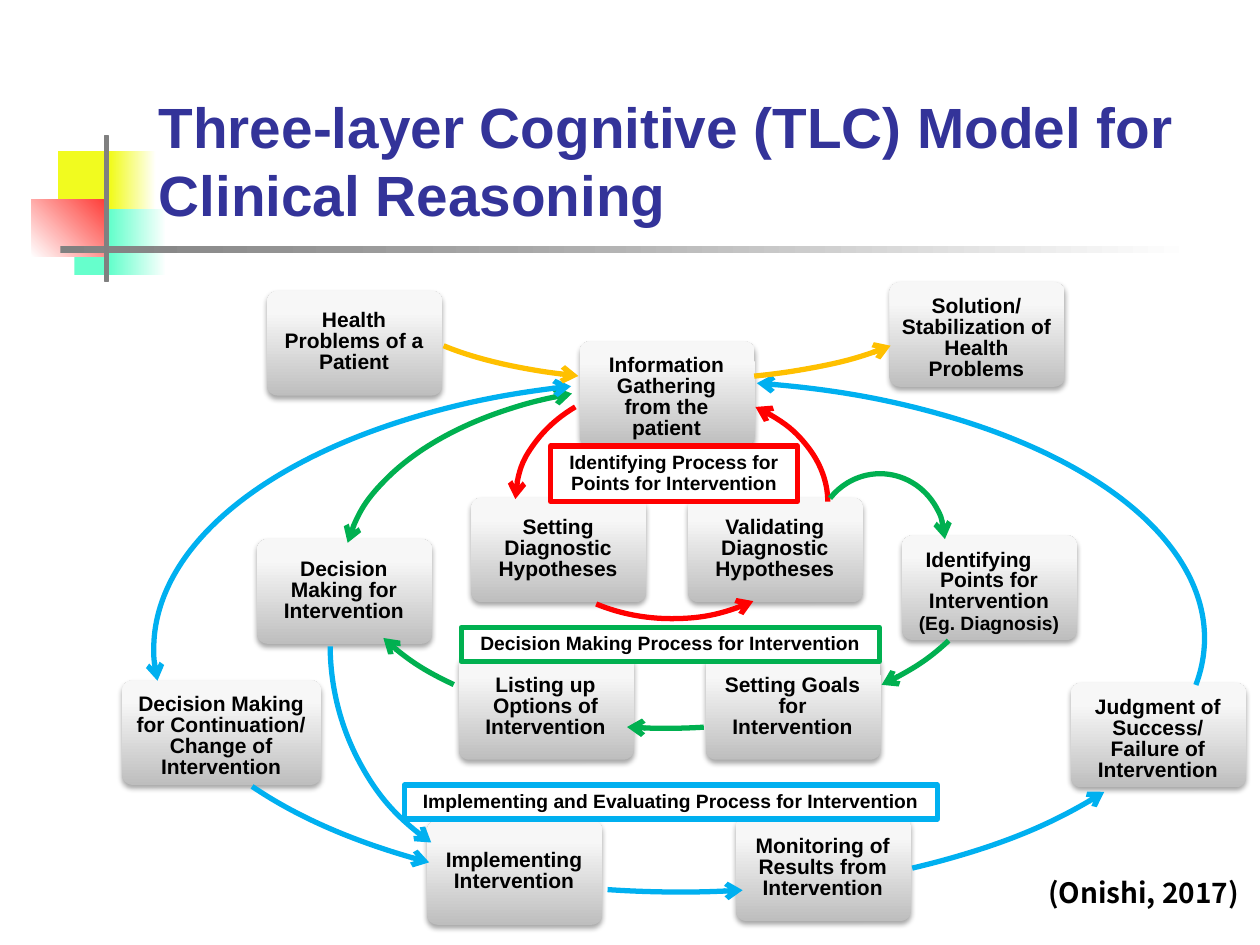
from lxml import etree
from pptx import Presentation
from pptx.dml.color import RGBColor
from pptx.enum import shapes, text
from pptx.oxml import ns
from pptx.util import Inches, Pt

BLACK = RGBColor(0, 0, 0)
WHITE = RGBColor(255, 255, 255)
NAVY = RGBColor(0x33, 0x33, 0x99)
GRAY = RGBColor(0x80, 0x80, 0x80)
SILVER = RGBColor(0xA6, 0xA6, 0xA6)
YELLOW = RGBColor(0xF1, 0xFB, 0x1F)
MINT = RGBColor(0x66, 0xFF, 0xCC)
CORAL = RGBColor(0xFE, 0x39, 0x34)
RED = RGBColor(0xFF, 0, 0)
GREEN = RGBColor(0, 0xB0, 0x50)
BLUE = RGBColor(0, 0xB0, 0xF0)
GOLD = RGBColor(0xFF, 0xC0, 0)
STEEL = [(0, RGBColor(0xBE, 0xBE, 0xBE)), (80, RGBColor(0xF7, 0xF7, 0xF7)),
         (100, RGBColor(0xF8, 0xF8, 0xF8))]

TITLE = "Three-layer Cognitive (TLC) Model for Clinical Reasoning"
SOURCE = "(Onishi, 2017)"

# Title ornament: place, gradient stops, angle
DECOR = [
    ((0.46, 1.2, 0.48, 0.52), [(0, YELLOW), (100, YELLOW)], 0),
    ((0.88, 1.2, 0.36, 0.52), [(0, YELLOW), (100, WHITE)], 0),
    ((0.59, 1.66, 0.73, 0.52), [(0, MINT), (39, MINT), (100, WHITE)], 0),
    ((0.25, 1.58, 0.61, 0.46), [(0, WHITE), (100, CORAL)], 315),
    ((0.48, 1.95, 9, 0.06), [(0, GRAY), (39, SILVER), (100, WHITE)], 0),
]
BAR = (0.83, 1.08, 0.03, 1.15)

# Steps: left, top, width, runs (text, size), whether the text is four lines
WIDE, STEP = 1.58, 1.39
STEPS = [
    (0.97, 5.4, WIDE, [("Decision Making for Continuation/ Change of Intervention", 12)], True),
    (3.74, 3.95, STEP, [("Setting Diagnostic Hypotheses", 12)], False),
    (5.46, 3.95, STEP, [("Validating Diagnostic Hypotheses", 12)], False),
    (3.64, 5.2, STEP, [("Listing up Options of Intervention", 12)], False),
    (2.12, 2.31, STEP, [("Health Problems of a Patient", 12)], False),
    (4.6, 2.71, STEP, [("Information Gathering from the patient", 12)], True),
    (7.16, 4.25, STEP, [("Identifying　Points for Intervention ", 12),
                        ("(Eg. Diagnosis)", 11)], True),
    (2.04, 4.28, STEP, [("Decision Making for Intervention", 12)], False),
    (3.39, 6.51, STEP, [("Implementing Intervention", 12)], False),
    (5.84, 6.48, STEP, [("Monitoring of Results from Intervention", 12)], False),
    (8.5, 5.42, STEP, [("Judgment of Success/ Failure of Intervention", 12)], True),
    (5.6, 5.2, STEP, [("Setting Goals for Intervention", 12)], False),
    (7.06, 2.24, STEP, [("Solution/ Stabilization of Health Problems", 12)], True),
]

# Arcs: ellipse, start and end degrees, colour, arrowed ends
HEAD, TAIL = "headEnd", "tailEnd"
ARCS = [
    ((4.09, 3.03, 2.48, 1.88), 180.4, 224.1, RED, [HEAD]),
    ((4.09, 3.03, 2.48, 1.88), 51, 126, RED, [HEAD]),
    ((4.09, 3.09, 2.48, 1.79), 311.4, 359.8, RED, [HEAD]),
    ((2.73, 3.06, 5.12, 2.94), 185, 241.9, GREEN, [HEAD, TAIL]),
    ((2.73, 3.06, 5.12, 2.71), 148.9, 163.9, GREEN, [TAIL]),
    ((2.73, 3.09, 5.12, 2.69), 77.5, 103.2, GREEN, [TAIL]),
    ((2.73, 3.08, 5.12, 2.7), 16.3, 30.5, GREEN, [TAIL]),
    ((6.47, 3.76, 1.03, 1.07), 220.6, 358.2, GREEN, [TAIL]),
    ((1.22, 3.02, 8.35, 4.26), 176.5, 247.5, BLUE, [HEAD, TAIL]),
    ((1.22, 3.03, 8.35, 4.06), 138.1, 160.8, BLUE, [HEAD]),
    ((1.22, 3.02, 8.35, 4.06), 76.1, 105.9, BLUE, [HEAD]),
    ((1.26, 3.03, 8.35, 4.06), 20.2, 45.4, BLUE, [HEAD]),
    ((1.27, 3.02, 8.29, 4.09), 286.3, 5.2, BLUE, [HEAD]),
    ((3.1, 1.68, 4.4, 1.34), 138.2, 167.5, GOLD, [HEAD]),
    ((2.62, 3.26, 3.42, 3.71), 120, 179.5, BLUE, [HEAD]),
    ((3.09, 1.68, 4.4, 1.34), 12.5, 42.4, GOLD, [HEAD]),
]

# Layer labels
LABELS = [
    ((4.37, 3.54, 1.96, 0.44), "Identifying Process for Points for Intervention", RED),
    ((3.66, 4.98, 3.32, 0.27), "Decision Making Process for Intervention", GREEN),
    ((3.21, 6.23, 4.23, 0.27), "Implementing and Evaluating Process for Intervention", BLUE),
]


def sub(node, tag, **attrs):
    return etree.SubElement(node, ns.qn("a:" + tag), attrs)


def tint(node, color, alpha=None):
    clr = sub(node, "srgbClr", val=str(color))
    if alpha:
        sub(clr, "alpha", val=str(alpha * 1000))


def draw(parent, kind, box):
    shape = parent.add_shape(kind, *map(Inches, box))
    shape.shadow.inherit = False
    shape.line.fill.background()
    return shape


def blend(shape, stops, angle):
    shape.fill.gradient()
    grad = shape._element.spPr.find(ns.qn("a:gradFill"))
    for child in list(grad):
        grad.remove(child)
    group = sub(grad, "gsLst")
    for pos, color in stops:
        tint(sub(group, "gs", pos=str(pos * 1000)), color)
    sub(grad, "lin", ang=str(angle * 60000), scaled="0")


def cast(shape):
    fx = shape._element.spPr.find(ns.qn("a:effectLst"))
    tint(sub(fx, "outerShdw", blurRad=str(Pt(3.1)), dist=str(Pt(1.8)),
             dir="5400000", rotWithShape="0"), BLACK, 35)


def write(frame, runs, align, color=BLACK, font="Arial", pitch=None):
    frame.word_wrap = True
    para = frame.paragraphs[0]
    para.alignment = align
    if pitch:
        para.line_spacing = Pt(pitch)
    for words, size in runs:
        run = para.add_run()
        run.text = words
        run.font.size, run.font.name = Pt(size), font
        run.font.bold, run.font.color.rgb = True, color


def main():
    deck = Presentation()
    deck.slide_width, deck.slide_height = Inches(10), Inches(7.5)
    slide = deck.slides.add_slide(deck.slide_layouts[5])
    art = slide.shapes
    kinds, align = shapes.MSO_SHAPE, text.PP_ALIGN

    # Title ornament
    for box, stops, angle in DECOR:
        blend(draw(art, kinds.RECTANGLE, box), stops, angle)
    bar = draw(art, kinds.RECTANGLE, BAR)
    bar.fill.solid()
    bar.fill.fore_color.rgb = bar.line.color.rgb = GRAY
    bar.line.width = Pt(0.75)

    # Title, in front of the ornament
    title = art.title
    title.left, title.top, title.width, title.height = map(Inches, (1.16, 0.67, 9.09, 1.19))
    title.text_frame.auto_size = text.MSO_AUTO_SIZE.NONE
    title.text_frame.vertical_anchor = text.MSO_ANCHOR.BOTTOM
    write(title.text_frame, [(TITLE, 32.4)], align.LEFT, NAVY)
    art._spTree.append(title._element)

    # Source
    note = art.add_textbox(*map(Inches, (7.48, 6.9, 2.45, 0.37)))
    write(note.text_frame, [(SOURCE, 16)], align.RIGHT, font="Noto Sans CJK JP")

    # Steps: a card with its text, grouped
    for left, top, width, runs, full in STEPS:
        group = art.add_group_shape().shapes
        card = draw(group, kinds.ROUNDED_RECTANGLE, (left, top, width, 0.83))
        card.adjustments[0] = 0.1
        blend(card, STEEL, 270)
        cast(card)
        frame = group.add_textbox(*map(Inches, (left + 0.02, top + 0.02,
                                                width - 0.05, 0.78))).text_frame
        frame.vertical_anchor = text.MSO_ANCHOR.MIDDLE
        frame.margin_left = frame.margin_right = Inches(0.07)
        frame.margin_top = Inches(0.12 if full else 0.07)
        frame.margin_bottom = Inches(0.04 if full else 0.07)
        write(frame, runs, align.CENTER, pitch=12)

    # Arcs: 0.6 adjustment units to the degree
    for box, start, end, color, ends in ARCS:
        arc = draw(art, kinds.ARC, box)
        arc.adjustments[0], arc.adjustments[1] = start * 0.6, end * 0.6
        arc.fill.background()
        arc.line.color.rgb, arc.line.width = color, Pt(3)
        for tag in ends:
            sub(arc.line._get_or_add_ln(), tag, type="arrow")

    # Layer labels
    for box, words, color in LABELS:
        label = art.add_textbox(*map(Inches, box))
        label.fill.solid()
        label.fill.fore_color.rgb = WHITE
        label.line.color.rgb, label.line.width = color, Pt(3)
        write(label.text_frame, [(words, 11)], align.CENTER, pitch=12)

    deck.save("out.pptx")


if __name__ == "__main__":
    main()
